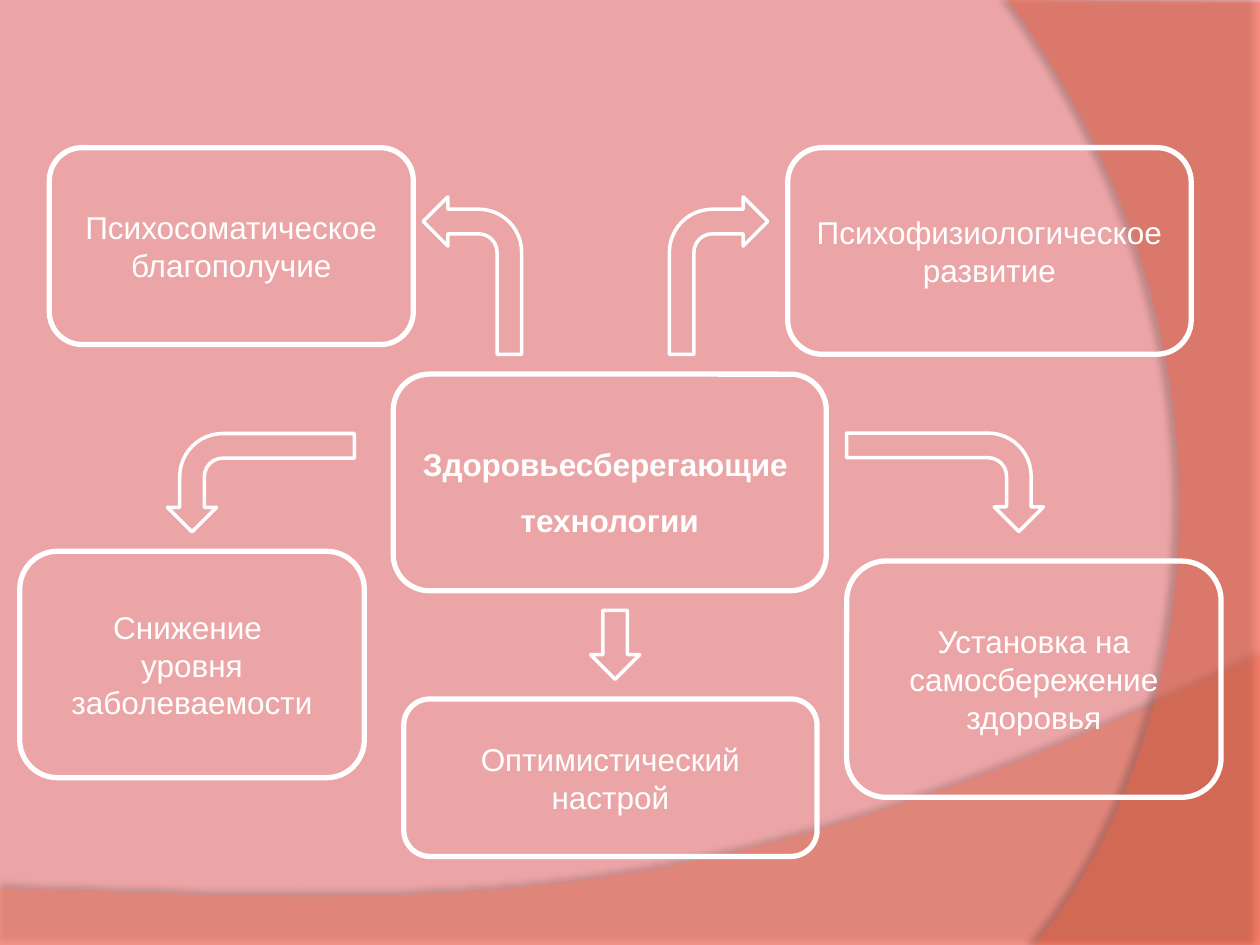
from lxml.etree import SubElement
from pptx import Presentation
from pptx.dml.color import RGBColor
from pptx.enum.shapes import MSO_SHAPE
from pptx.enum.text import PP_ALIGN
from pptx.oxml.ns import qn
from pptx.util import Pt

WHITE = RGBColor(0xFF, 0xFF, 0xFF)
PINK = RGBColor(0xEC, 0xA5, 0xA6)
CORAL = RGBColor(0xFF, 0x7E, 0x66)
ORANGE = RGBColor(0xFF, 0x65, 0x42)
STEPS = 40


def curve(a, b, c, d):
    """Points along a cubic Bezier curve, from a to d."""
    dots = []
    for i in range(STEPS + 1):
        t = i / STEPS
        u = 1 - t
        dots.append(tuple(u**3 * p + 3 * u * u * t * q + 3 * u * t * t * r + t**3 * s
                          for p, q, r, s in zip(a, b, c, d)))
    return dots


def wave(slide, left, top, dots, color, alpha, shade, dist, angle):
    """Translucent filled outline with a soft shadow; alpha and shade are percents."""
    spots = [(Pt(left + x), Pt(top + y)) for x, y in dots]
    build = slide.shapes.build_freeform(*spots[0])
    build.add_line_segments(spots[1:], close=True)
    shape = build.convert_to_shape()
    shape.fill.solid()
    shape.fill.fore_color.rgb = color
    shape.line.fill.background()
    shape.shadow.inherit = False
    props = shape.element.spPr
    tint = props.find(qn("a:solidFill")).find(qn("a:srgbClr"))
    SubElement(tint, qn("a:alpha"), val=str(alpha * 1000))
    outer = SubElement(props.find(qn("a:effectLst")), qn("a:outerShdw"),
                       blurRad=str(Pt(4)), dist=str(Pt(dist)),
                       dir=str(angle * 60000), algn="ctr", rotWithShape="0")
    black = SubElement(outer, qn("a:srgbClr"), val="000000")
    SubElement(black, qn("a:alpha"), val=str(shade * 1000))


def backdrop(slide, width, height):
    slide.background.fill.solid()
    slide.background.fill.fore_color.rgb = PINK
    low = 374.4
    hill = curve((width, 0), (402.5, 150.5), (281.5, 143.3), (0, 133.2))
    wave(slide, 0, low, [(0, 166.3), (width, 166.3)] + hill, CORAL, 45, 35, 3.5, 270)
    side = 576
    arc = curve((15.1, height), (97.2, 445.7), (157, 216), (0, 0))
    wave(slide, side, 0, [(width - side, 1.4), (width - side, height)] + arc,
         ORANGE, 40, 45, 4, 180)


def outline(slide, kind, box, weight):
    shape = slide.shapes.add_shape(kind, *map(Pt, box))
    shape.shadow.inherit = False
    shape.fill.background()
    shape.line.color.rgb = WHITE
    shape.line.width = Pt(weight)
    return shape


def card(slide, box, lines, bold=False, space=1):
    frame = outline(slide, MSO_SHAPE.ROUNDED_RECTANGLE, box, 3).text_frame
    frame.word_wrap = True
    frame.text = "\n".join(lines)
    for para in frame.paragraphs:
        para.alignment = PP_ALIGN.CENTER
        para.line_spacing = space
        para.font.name = "Arial"
        para.font.size = Pt(18)
        para.font.bold = bold
        para.font.color.rgb = WHITE


def arrow(slide, box, turn=0, flip=None, kind=MSO_SHAPE.BENT_ARROW):
    shape = outline(slide, kind, box, 2)
    shape.rotation = turn
    if flip:
        shape.element.spPr.find(qn("a:xfrm")).set(flip, "1")


def diagram(slide, left, top):
    """Central card, five cards around it and the arrows between them."""
    def at(x, y, w, h):
        return left + x, top + y, w, h

    card(slide, at(213.4, 129.4, 247.5, 123.8),
         ["Здоровьесберегающие ", "технологии"], True, 1.5)

    cards = [
        (at(438.8, 0, 230.6, 118.1), ["Психофизиологическое развитие"]),
        (at(472.5, 236.2, 214, 135), ["Установка на самосбережение здоровья"]),
        (at(16.9, 0, 208, 112.5), ["Психосоматическое благополучие"]),
        (at(0, 230.6, 196.9, 129.4), ["Снижение ", "уровня заболеваемости"]),
        (at(219.4, 315, 236.2, 90), ["Оптимистический настрой"]),
    ]
    for box, lines in cards:
        card(slide, box, lines)

    wide = 56.25
    arrow(slide, at(371.2, 28.1, wide, 90))
    arrow(slide, at(230.6, 28.1, wide, 90), flip="flipH")
    arrow(slide, at(500.6, 135, wide, 112.5), turn=90)
    arrow(slide, at(109.7, 138, wide, 106.9), turn=90, flip="flipV")
    arrow(slide, at(326.2, 264.4, wide / 2, 39.4), kind=MSO_SHAPE.DOWN_ARROW)


def main():
    deck = Presentation()
    deck.slide_width, deck.slide_height = Pt(720), Pt(540)
    slide = deck.slides.add_slide(deck.slide_layouts[6])
    backdrop(slide, 720, 540)
    diagram(slide, 11.3, 84.4)
    deck.save("out.pptx")


if __name__ == "__main__":
    main()
